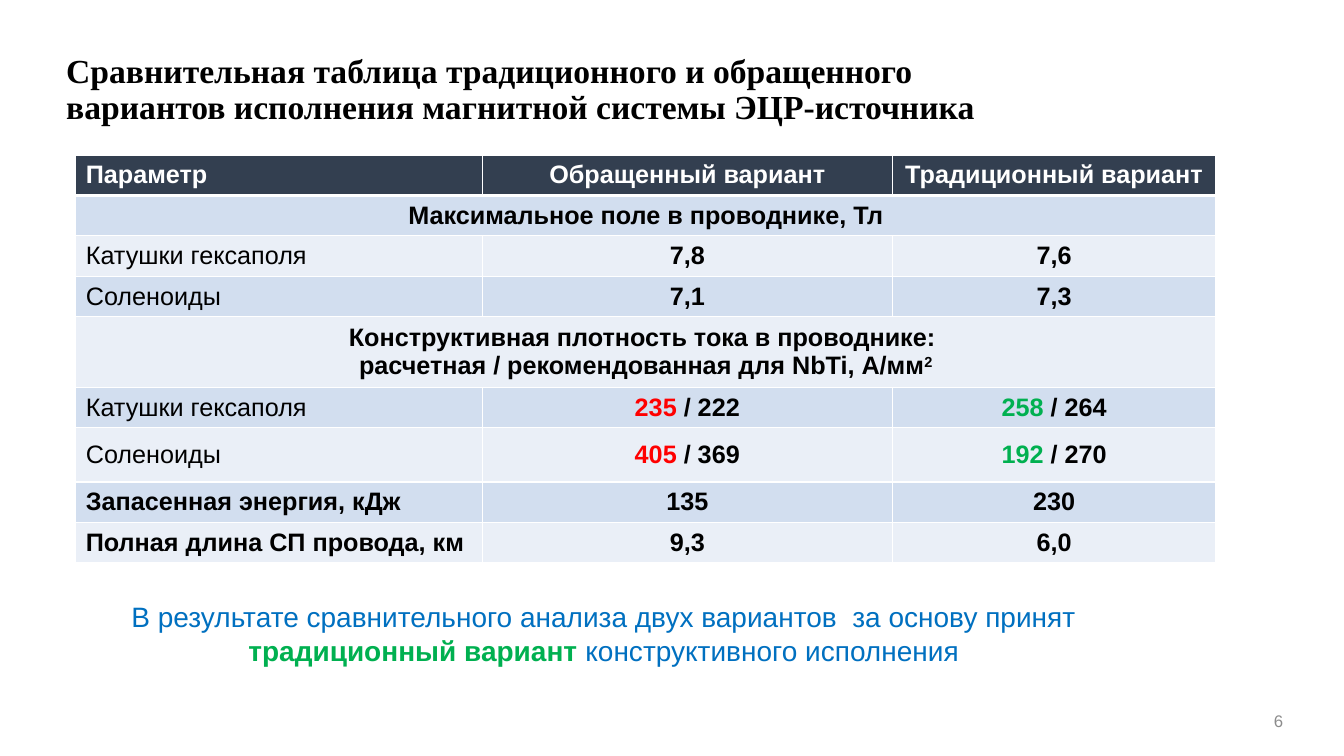
import pptx
import pptx.util
import pptx.dml.color
import pptx.enum.text
import pptx.oxml
import pptx.oxml.ns
from dataclasses import dataclass
from lxml import etree

Cm = pptx.util.Cm
ALIGN = pptx.enum.text.PP_ALIGN
ANCHOR = pptx.enum.text.MSO_ANCHOR


@dataclass(frozen=True)
class Theme:
    sans: str = "Arial"
    serif: str = "Times New Roman"
    black: str = "000000"
    white: str = "FFFFFF"
    gray: str = "8C8C8C"
    blue: str = "0070C0"
    red: str = "FF0000"
    green: str = "00B050"
    header: str = "333F50"
    bands: tuple = ("EAEFF7", "D2DEEF")
    title_size: int = 24
    note_size: int = 20
    table_size: int = 18
    number_size: int = 12


T = Theme()


def style(size, color=T.black, bold=False, name=T.sans):
    return {"size": pptx.util.Pt(size), "name": name, "bold": bold, "color": color}


PLAIN = style(T.table_size)
BOLD = style(T.table_size, bold=True)
HEAD = style(T.table_size, T.white, True)
BAD = style(T.table_size, T.red, True)
GOOD = style(T.table_size, T.green, True)
SUPER = {**BOLD, "baseline": "30000"}

COLUMNS = (10.24, 10.34, 8.15)
HEIGHTS = (0.71, 0.99, 0.99, 0.99, 1.37, 0.99, 1.37, 0.99, 0.99)


def label(text, fmt=PLAIN):
    return [[(text, fmt)]]


def values(name, fmt, *cells):
    return [label(name, fmt)] + [label(c, BOLD) for c in cells]


def densities(name, inverted, inverted_limit, usual, usual_limit):
    return [
        label(name),
        [[(f"{inverted} ", BAD), (f"/ {inverted_limit}", BOLD)]],
        [[(usual, GOOD), (f" / {usual_limit}", BOLD)]],
    ]


ROWS = [
    [label(t, HEAD) for t in ("Параметр", "Обращенный вариант", "Традиционный вариант")],
    [label("Максимальное поле в проводнике, Тл", BOLD)],
    values("Катушки гексаполя", PLAIN, "7,8", "7,6"),
    values("Соленоиды", PLAIN, "7,1", "7,3"),
    [[
        [("Конструктивная плотность тока в проводнике: ", BOLD)],
        [("расчетная / рекомендованная для NbTi, А/мм", BOLD), ("2", SUPER)],
    ]],
    densities("Катушки гексаполя", "235", "222", "258", "264"),
    densities("Соленоиды", "405", "369", "192", "270"),
    values("Запасенная энергия, кДж", BOLD, "135", "230"),
    values("Полная длина СП провода, км", BOLD, "9,3", "6,0"),
]


def write(tf, paragraphs, align, spacing=None):
    for i, runs in enumerate(paragraphs):
        p = tf.add_paragraph() if i else tf.paragraphs[0]
        p.alignment = align
        if spacing:
            p.line_spacing = spacing
        for text, fmt in runs:
            r = p.add_run()
            r.text = text
            for key, value in fmt.items():
                if key == "color":
                    r.font.color.rgb = pptx.dml.color.RGBColor.from_string(value)
                elif key == "baseline":
                    r._r.get_or_add_rPr().set(key, value)
                else:
                    setattr(r.font, key, value)


def add_text(s, box, paragraphs, align=ALIGN.LEFT, anchor=ANCHOR.TOP, spacing=None):
    tf = s.shapes.add_textbox(*map(Cm, box)).text_frame
    tf.word_wrap = True
    tf.vertical_anchor = anchor
    write(tf, paragraphs, align, spacing)


def add_borders(cell, widths):
    qn = pptx.oxml.ns.qn
    tcPr = cell._tc.get_or_add_tcPr()
    for side, width in widths.items():
        ln = etree.SubElement(tcPr, qn(f"a:ln{side}"), w=str(pptx.util.Pt(width)))
        fill = etree.SubElement(ln, qn("a:solidFill"))
        etree.SubElement(fill, qn("a:srgbClr"), val=T.white)


def add_title(s, box):
    text = ("Сравнительная таблица традиционного и обращенного "
            "вариантов исполнения магнитной системы ЭЦР-источника")
    add_text(s, box, label(text, style(T.title_size, bold=True, name=T.serif)),
             anchor=ANCHOR.MIDDLE, spacing=0.9)


def add_comparison(s, box):
    table = s.shapes.add_table(len(ROWS), len(COLUMNS), *map(Cm, box)).table
    for column, width in zip(table.columns, COLUMNS):
        column.width = Cm(width)
    for i, (row, height) in enumerate(zip(ROWS, HEIGHTS)):
        table.rows[i].height = Cm(height)
        section = len(row) == 1
        for j in range(len(COLUMNS)):
            cell = table.cell(i, j)
            add_borders(cell, {"L": 1, "R": 1, "T": 3 if i == 1 else 1, "B": 1 if i else 3})
            cell.fill.solid()
            color = T.bands[i % 2] if i else T.header
            cell.fill.fore_color.rgb = pptx.dml.color.RGBColor.from_string(color)
            cell.vertical_anchor = ANCHOR.MIDDLE if i else ANCHOR.TOP
            if j < len(row):
                write(cell.text_frame, row[j], ALIGN.CENTER if j or section else ALIGN.LEFT)
        if section:
            table.cell(i, 0).merge(table.cell(i, len(COLUMNS) - 1))


def add_conclusion(s, box):
    blue = style(T.note_size, T.blue)
    add_text(s, box, [[
        ("В результате сравнительного анализа двух вариантов  за основу принят ", blue),
        ("традиционный вариант ", style(T.note_size, T.green, True)),
        ("конструктивного исполнения", blue),
    ]], ALIGN.CENTER)


def add_number(s, box):
    add_text(s, box, label("6", style(T.number_size, T.gray)), ALIGN.RIGHT, ANCHOR.MIDDLE)


def main():
    prs = pptx.Presentation()
    prs.slide_width, prs.slide_height = Cm(33.87), Cm(19.05)
    s = prs.slides.add_slide(prs.slide_layouts[6])
    add_number(s, (24.97, 17.65, 7.62, 1.02))
    add_title(s, (1.42, 1.02, 23.93, 2.51))
    add_comparison(s, (1.91, 3.91, sum(COLUMNS), sum(HEIGHTS)))
    add_conclusion(s, (3, 14.99, 24.43, 1.96))
    prs.save("out.pptx")


if __name__ == "__main__":
    main()
